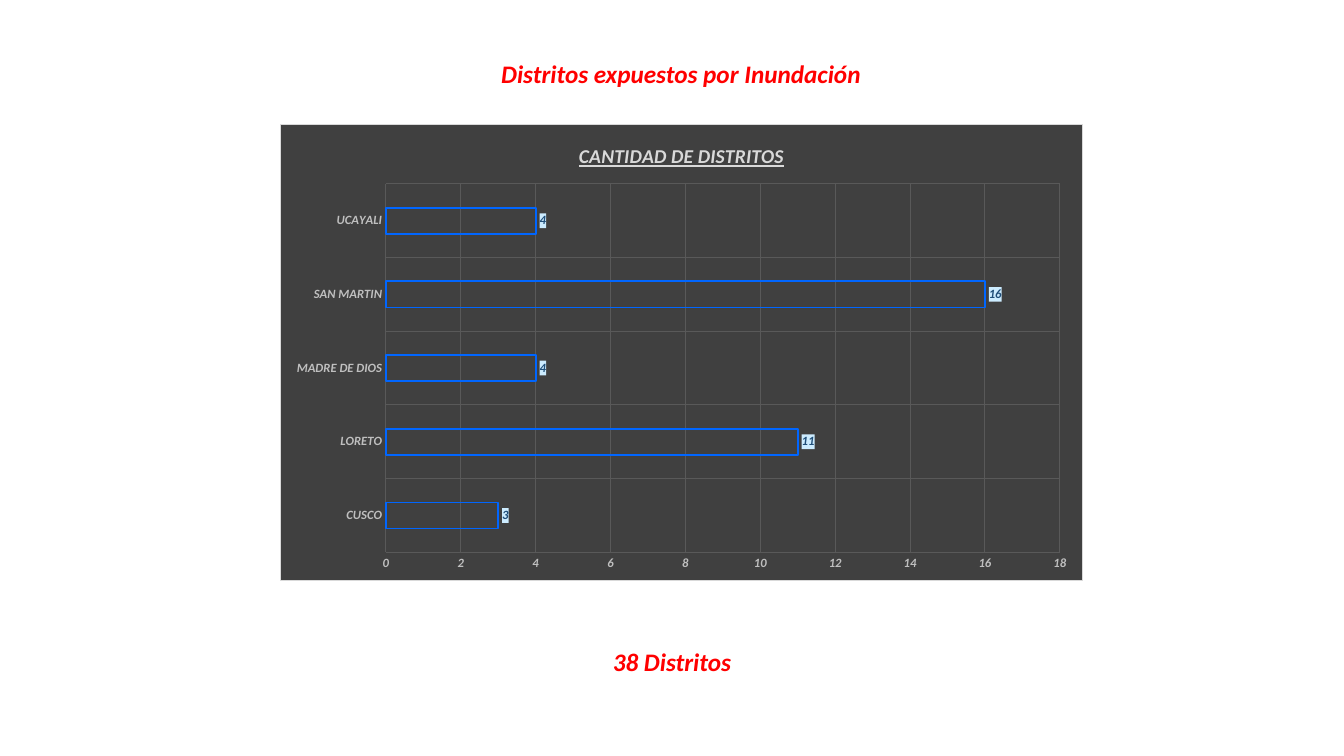
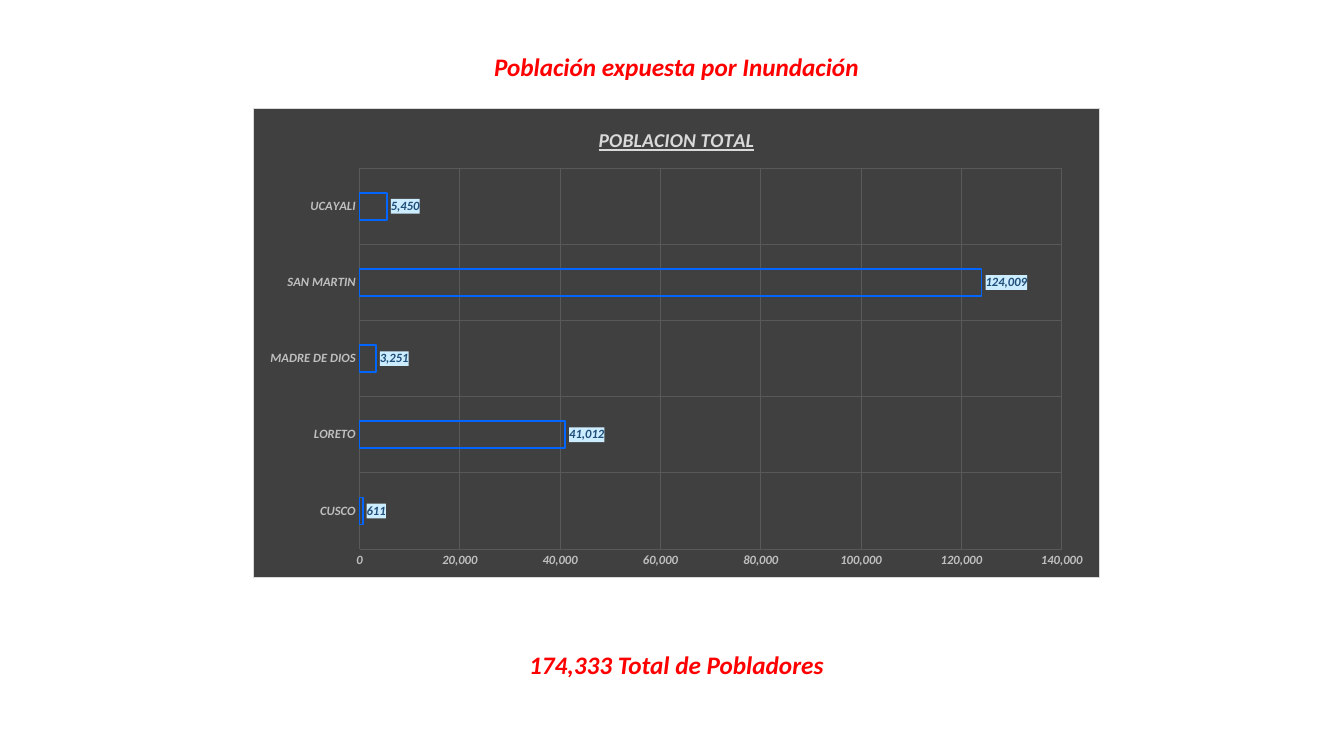
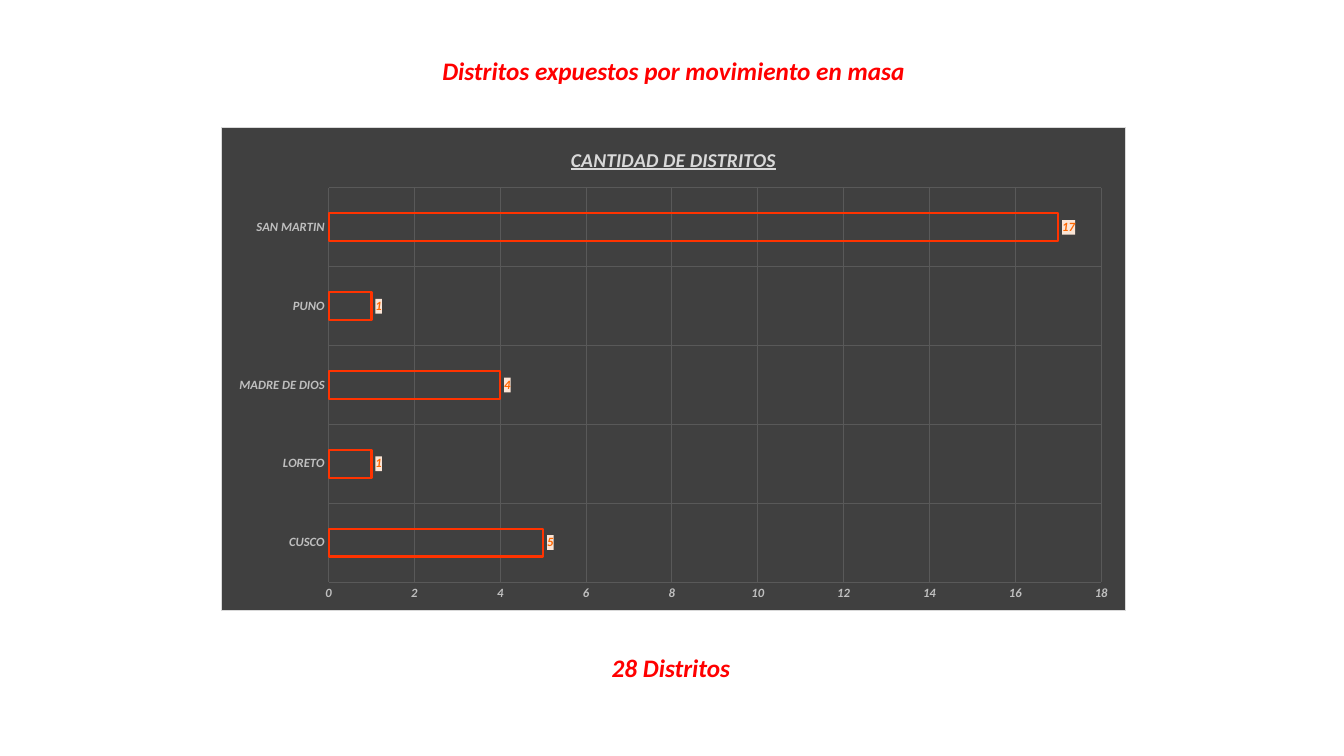
from dataclasses import dataclass

from lxml.etree import SubElement
from pptx import Presentation
from pptx.chart.chart import Chart
from pptx.chart.data import CategoryChartData
from pptx.dml.color import RGBColor
from pptx.enum.chart import XL_CHART_TYPE, XL_LABEL_POSITION, XL_TICK_MARK
from pptx.enum.text import MSO_ANCHOR, PP_ALIGN
from pptx.oxml import parse_xml
from pptx.oxml.ns import nsdecls, qn
from pptx.text.text import Font
from pptx.util import Inches, Pt

FONT = "Calibri"
COLORS = {
    "heading": "FF0000",
    "panel": "404040",
    "panel_border": "D9D9D9",
    "chart_title": "D9D9D9",
    "grid": "595959",
    "axis_text": "BFBFBF",
    "flood_bar": "0066FF",
    "flood_label": "1F4E79",
    "flood_label_fill": "CCECFF",
    "slide_bar": "FF3300",
    "slide_label": "FF6600",
    "slide_label_fill": "FBE5D6",
}


@dataclass(frozen=True)
class Box:
    left: float
    top: float
    width: float
    height: float


@dataclass(frozen=True)
class Hazard:
    """Colour keys and bar outline shared by the charts of one hazard."""
    bar: str
    label: str
    label_fill: str
    outline: float


@dataclass(frozen=True)
class ExposureSlide:
    heading: str
    heading_box: Box
    total: str
    total_box: Box
    chart_title: str
    chart_box: Box
    counts: dict[str, int]
    hazard: Hazard


FLOOD = Hazard("flood_bar", "flood_label", "flood_label_fill", 1.25)
LANDSLIDE = Hazard("slide_bar", "slide_label", "slide_label_fill", 1.5)

SLIDES = [
    ExposureSlide(
        "Distritos expuestos por Inundación", Box(4.85, 0.53, 3.81, 0.4),
        "38 Distritos", Box(5.91, 6.36, 1.51, 0.4),
        "CANTIDAD DE DISTRITOS", Box(2.78, 1.23, 7.96, 4.53),
        {"CUSCO": 3, "LORETO": 11, "MADRE DE DIOS": 4, "SAN MARTIN": 16, "UCAYALI": 4},
        FLOOD,
    ),
    ExposureSlide(
        "Población expuesta por Inundación", Box(4.78, 0.46, 3.86, 0.4),
        "174,333 Total de Pobladores", Box(5.03, 6.39, 3.36, 0.4),
        "POBLACION TOTAL", Box(2.51, 1.07, 8.4, 4.66),
        {"CUSCO": 611, "LORETO": 41012, "MADRE DE DIOS": 3251,
         "SAN MARTIN": 124009, "UCAYALI": 5450},
        FLOOD,
    ),
    ExposureSlide(
        "Distritos expuestos por movimiento en masa", Box(4.26, 0.5, 4.84, 0.4),
        "28 Distritos", Box(5.82, 6.42, 1.67, 0.4),
        "CANTIDAD DE DISTRITOS", Box(2.19, 1.26, 8.98, 4.8),
        {"CUSCO": 5, "LORETO": 1, "MADRE DE DIOS": 4, "PUNO": 1, "SAN MARTIN": 17},
        LANDSLIDE,
    ),
]


def rgb(key: str) -> RGBColor:
    return RGBColor.from_string(COLORS[key])


def lengths(box: Box) -> tuple[int, int, int, int]:
    return Inches(box.left), Inches(box.top), Inches(box.width), Inches(box.height)


def style_font(font: Font, size: float, color: str) -> None:
    font.name = FONT
    font.size = Pt(size)
    font.bold = True
    font.italic = True
    font.color.rgb = rgb(color)


def write_heading(shape, text: str, box: Box, wrap: bool) -> None:
    shape.left, shape.top, shape.width, shape.height = lengths(box)
    frame = shape.text_frame
    frame.word_wrap = wrap
    frame.vertical_anchor = MSO_ANCHOR.TOP
    paragraph = frame.paragraphs[0]
    paragraph.alignment = PP_ALIGN.CENTER
    run = paragraph.add_run()
    run.text = text
    style_font(run.font, 18, "heading")


def add_background(text_properties, fill: str, border: str | None = None) -> None:
    """Put a fill and an optional border just before a chart part's text properties."""
    properties = parse_xml(f"<c:spPr {nsdecls('c', 'a')}/>")
    solid = SubElement(properties, qn("a:solidFill"))
    SubElement(solid, qn("a:srgbClr"), val=COLORS[fill])
    if border:
        line = SubElement(properties, qn("a:ln"), w=str(Pt(0.75)))
        solid = SubElement(line, qn("a:solidFill"))
        SubElement(solid, qn("a:srgbClr"), val=COLORS[border])
    text_properties.addprevious(properties)


def style_axis(axis) -> None:
    axis.major_tick_mark = XL_TICK_MARK.NONE
    axis.minor_tick_mark = XL_TICK_MARK.NONE
    axis.format.line.fill.background()
    axis.has_major_gridlines = True
    grid = axis.major_gridlines.format.line
    grid.color.rgb = rgb("grid")
    grid.width = Pt(0.75)
    style_font(axis.tick_labels.font, 9, "axis_text")


def style_bars(chart: Chart, hazard: Hazard) -> None:
    plot = chart.plots[0]
    plot.vary_by_categories = False
    plot.gap_width = 182
    plot.overlap = -50
    bars = plot.series[0]
    bars.format.fill.background()
    bars.format.line.color.rgb = rgb(hazard.bar)
    bars.format.line.width = Pt(hazard.outline)
    labels = bars.data_labels
    labels.show_value = True
    labels.position = XL_LABEL_POSITION.OUTSIDE_END
    labels.number_format = "#,##0"
    labels.number_format_is_linked = False
    style_font(labels.font, 9, hazard.label)
    add_background(chart.element.xpath(".//c:dLbls/c:txPr")[0], hazard.label_fill)


def add_exposure_chart(slide, content: ExposureSlide) -> None:
    data = CategoryChartData(number_format="#,##0")
    data.categories = list(content.counts)
    data.add_series("Series 1", list(content.counts.values()))
    chart = slide.shapes.add_chart(
        XL_CHART_TYPE.BAR_CLUSTERED, *lengths(content.chart_box), data
    ).chart
    chart.has_legend = False
    chart.font.name = FONT
    chart.font.size = Pt(10)
    add_background(chart.element.find(qn("c:txPr")), "panel", "panel_border")

    chart.has_title = True
    chart.chart_title.include_in_layout = False
    run = chart.chart_title.text_frame.paragraphs[0].add_run()
    run.text = content.chart_title
    style_font(run.font, 14, "chart_title")
    run.font.underline = True

    style_axis(chart.category_axis)
    style_axis(chart.value_axis)
    chart.value_axis.minimum_scale = 0
    chart.value_axis.tick_labels.number_format = "#,##0"
    chart.value_axis.tick_labels.number_format_is_linked = False
    style_bars(chart, content.hazard)


def main() -> None:
    deck = Presentation()
    deck.slide_width = Inches(13.33)
    deck.slide_height = Inches(7.5)
    title_only = deck.slide_layouts.get_by_name("Title Only")
    for content in SLIDES:
        slide = deck.slides.add_slide(title_only)
        write_heading(slide.shapes.title, content.heading, content.heading_box, wrap=False)
        total = slide.shapes.add_textbox(*lengths(content.total_box))
        write_heading(total, content.total, content.total_box, wrap=True)
        add_exposure_chart(slide, content)
    deck.save("out.pptx")


if __name__ == "__main__":
    main()
